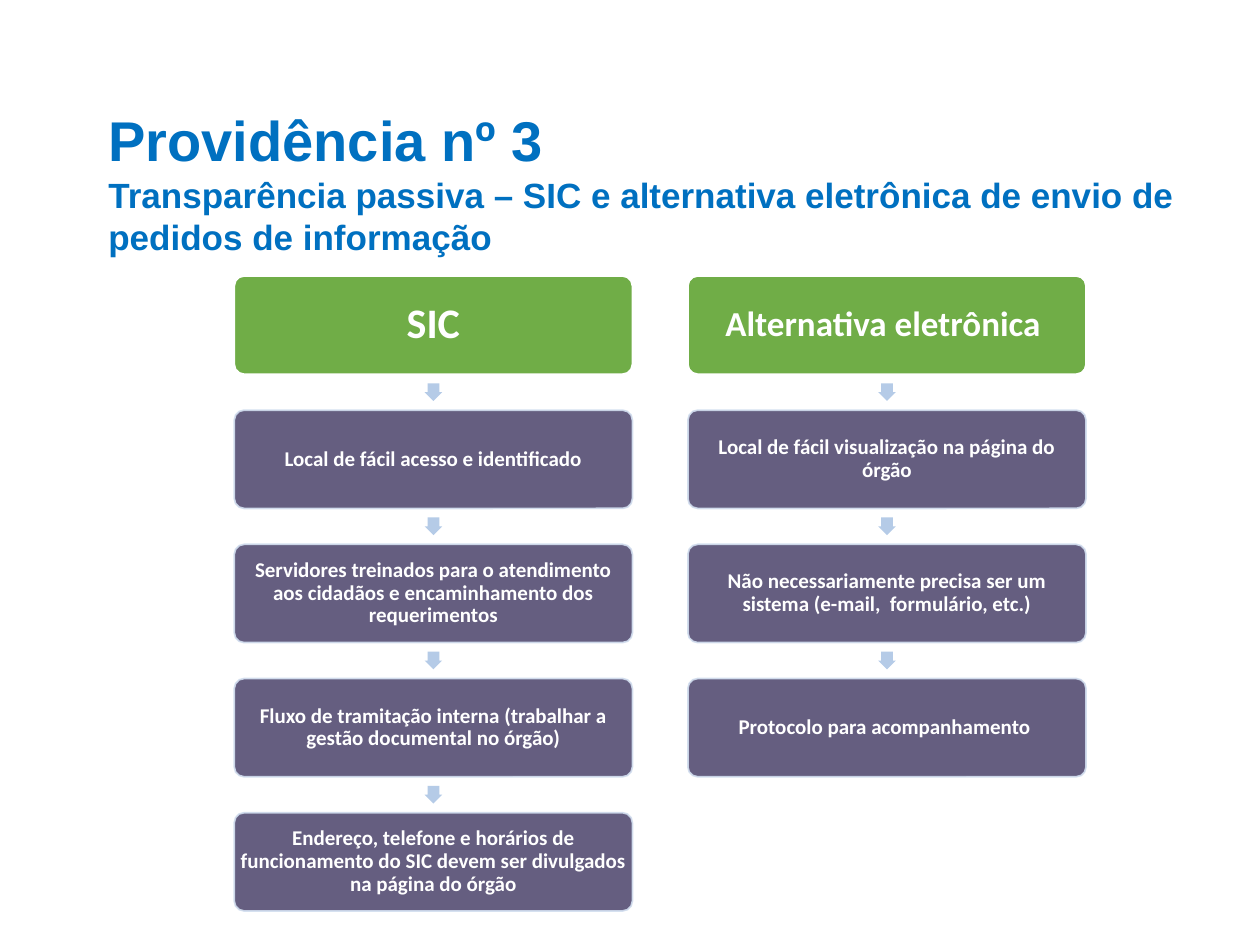
import pptx
import pptx.util
import pptx.dml.color
import pptx.enum.shapes
import pptx.enum.text
import pptx.oxml.ns
import lxml.etree

Inches = pptx.util.Inches
Pt = pptx.util.Pt
Kind = pptx.enum.shapes.MSO_SHAPE
Align = pptx.enum.text.PP_ALIGN
Anchor = pptx.enum.text.MSO_ANCHOR

HEADS = [
    ("Providência nº 3", 32),
    ("Transparência passiva – SIC e alternativa eletrônica de envio de pedidos de informação", 20),
]
FLOWS = [
    ("SIC", 24, [
        "Local de fácil acesso e identificado",
        "Servidores treinados para o atendimento aos cidadãos e encaminhamento dos requerimentos",
        "Fluxo de tramitação interna (trabalhar a gestão documental no órgão)",
        "Endereço, telefone e horários de funcionamento do SIC devem ser divulgados na página do órgão",
    ]),
    ("Alternativa eletrônica ", 20, [
        "Local de fácil visualização na página do órgão",
        "Não necessariamente precisa ser um sistema (e-mail,  formulário, etc.)",
        "Protocolo para acompanhamento ",
    ]),
]
LEFT, TOP = 1.86, 2.19
WIDE, HIGH = 3.16, 0.78
PITCH, STEP = 3.6, 1.065
ARROW = 0.14


def paint(color, value, alpha=100):
    color.rgb = pptx.dml.color.RGBColor.from_string(value)
    if alpha < 100:
        node = color._xFill.find(pptx.oxml.ns.qn("a:srgbClr"))
        lxml.etree.SubElement(node, pptx.oxml.ns.qn("a:alpha"), val=str(alpha * 1000))


def write(par, text, size, face, color):
    run = par.add_run()
    run.text = text
    run.font.size = Pt(size)
    run.font.name = face
    run.font.bold = True
    paint(run.font.color, color)


def draw(slide, kind, x, y, w, h, fill, alpha=100):
    shape = slide.shapes.add_shape(kind, Inches(x), Inches(y), Inches(w), Inches(h))
    shape.shadow.inherit = False
    shape.fill.solid()
    paint(shape.fill.fore_color, fill, alpha)
    return shape


def add_box(slide, x, y, text, size, fill, edge, alpha, inset):
    box = draw(slide, Kind.ROUNDED_RECTANGLE, x, y, WIDE, HIGH, fill, alpha)
    box.adjustments[0] = 0.1
    box.line.width = Pt(1)
    box.line.fill.solid()
    paint(box.line.fill.fore_color, edge, alpha)
    frame = box.text_frame
    frame.word_wrap = True
    frame.vertical_anchor = Anchor.MIDDLE
    frame.margin_left = frame.margin_right = Inches(inset)
    frame.margin_top = frame.margin_bottom = Inches(inset)
    par = frame.paragraphs[0]
    par.alignment = Align.CENTER
    par.line_spacing = 0.9
    write(par, text, size, "Calibri", "FFFFFF")


def add_arrow(slide, x, y):
    arrow = draw(slide, Kind.RIGHT_ARROW, x - ARROW / 2, y - ARROW / 2, ARROW, ARROW, "B5CBE7")
    arrow.rotation = 90
    arrow.adjustments[0] = 0.67
    arrow.adjustments[1] = 0.5
    arrow.line.fill.background()


def add_title(slide):
    title = slide.shapes.title
    title.left, title.top = Inches(0.76), Inches(0.79)
    title.width, title.height = Inches(8.95), Inches(1.31)
    frame = title.text_frame
    frame.word_wrap = True
    frame.auto_size = pptx.enum.text.MSO_AUTO_SIZE.NONE
    frame.vertical_anchor = Anchor.TOP
    for i, (text, size) in enumerate(HEADS):
        par = frame.add_paragraph() if i else frame.paragraphs[0]
        par.alignment = Align.LEFT
        write(par, text, size, "Arial", "0070C0")


def main():
    deck = pptx.Presentation()
    deck.slide_width, deck.slide_height = Inches(10), Inches(7.5)
    slide = deck.slides.add_slide(deck.slide_layouts[5])
    add_title(slide)
    for col, (head, size, steps) in enumerate(FLOWS):
        x = LEFT + col * PITCH
        add_box(slide, x, TOP, head, size, "70AD47", "FFFFFF", 100, 0.03)
        for row, text in enumerate(steps, 1):
            y = TOP + row * STEP
            add_arrow(slide, x + WIDE / 2, y - (STEP - HIGH) / 2)
            add_box(slide, x, y, text, 12, "554D73", "D2DEEF", 90, 0.02)
    deck.save("out.pptx")


if __name__ == "__main__":
    main()
